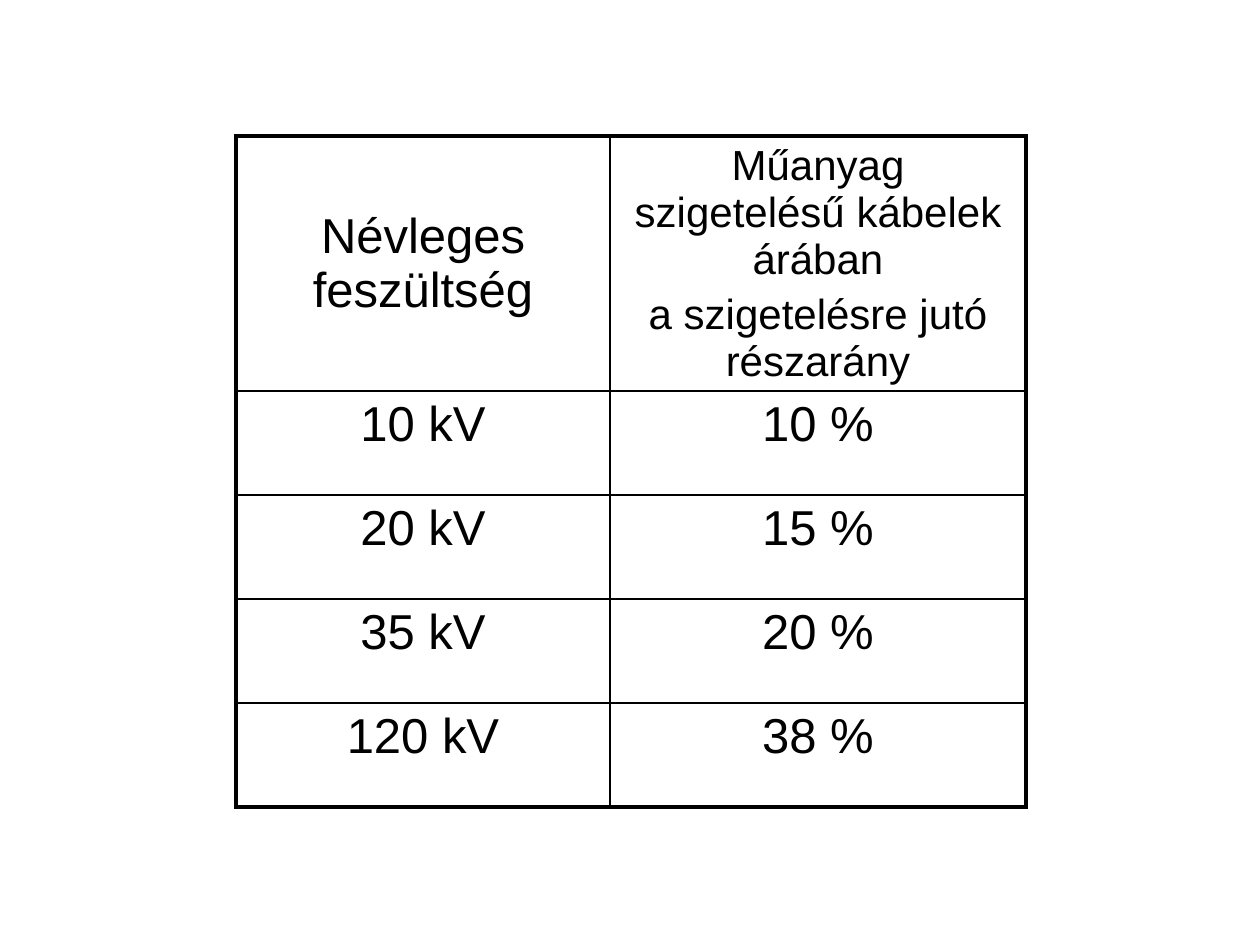
from lxml import etree
from pptx import Presentation
from pptx.dml.color import RGBColor
from pptx.enum.text import MSO_ANCHOR, PP_ALIGN
from pptx.oxml.ns import qn
from pptx.util import Emu, Pt

CENTER = PP_ALIGN.CENTER
TOP, MIDDLE = MSO_ANCHOR.TOP, MSO_ANCHOR.MIDDLE
BLACK = RGBColor(0, 0, 0)
FONT = "Arial"
INNER, OUTER = Pt(1), Pt(2.25)

COLUMN_WIDTHS = [374, 416]
ROW_HEIGHTS = [255] + [104] * 4
ROWS = [
    ("Névleges feszültség",
     "Műanyag szigetelésű kábelek árában\na szigetelésre jutó részarány"),
    ("10 kV", "10 %"),
    ("20 kV", "15 %"),
    ("35 kV", "20 %"),
    ("120 kV", "38 %"),
]


def px(n):
    return Emu(round(n * 914400 / 126))


def add_border(cell, side, width):
    tcPr = cell._tc.get_or_add_tcPr()
    ln = etree.SubElement(tcPr, qn(f"a:ln{side}"), w=str(width))
    fill = etree.SubElement(ln, qn("a:solidFill"))
    etree.SubElement(fill, qn("a:srgbClr"), val=str(BLACK))


def fill_cell(cell, text, size, anchor):
    cell.fill.background()
    cell.vertical_anchor = anchor
    tf = cell.text_frame
    tf.text = text
    for p in tf.paragraphs:
        p.alignment = CENTER
        p.space_before = Pt(size * 0.2)
        p.font.name = FONT
        p.font.size = Pt(size)
        p.font.color.rgb = BLACK


def add_grid(slide, left, top):
    n_rows, n_cols = len(ROWS), len(COLUMN_WIDTHS)
    frame = slide.shapes.add_table(n_rows, n_cols, px(left), px(top),
                                   px(sum(COLUMN_WIDTHS)), px(sum(ROW_HEIGHTS)))
    table = frame.table
    table.first_row = False
    table.horz_banding = False
    for column, width in zip(table.columns, COLUMN_WIDTHS):
        column.width = px(width)
    for row, height in zip(table.rows, ROW_HEIGHTS):
        row.height = px(height)
    for i, texts in enumerate(ROWS):
        for j, text in enumerate(texts):
            cell = table.cell(i, j)
            on_edge = {"L": j == 0, "R": j == n_cols - 1,
                       "T": i == 0, "B": i == n_rows - 1}
            for side, outer in on_edge.items():
                add_border(cell, side, OUTER if outer else INNER)
            size = 24 if "\n" in text else 28
            fill_cell(cell, text, size, MIDDLE if i == 0 else TOP)


def main():
    prs = Presentation()
    prs.slide_width, prs.slide_height = px(1260), px(945)
    slide = prs.slides.add_slide(prs.slide_layouts[6])
    add_grid(slide, 236, 136)
    prs.save("out.pptx")


if __name__ == "__main__":
    main()
